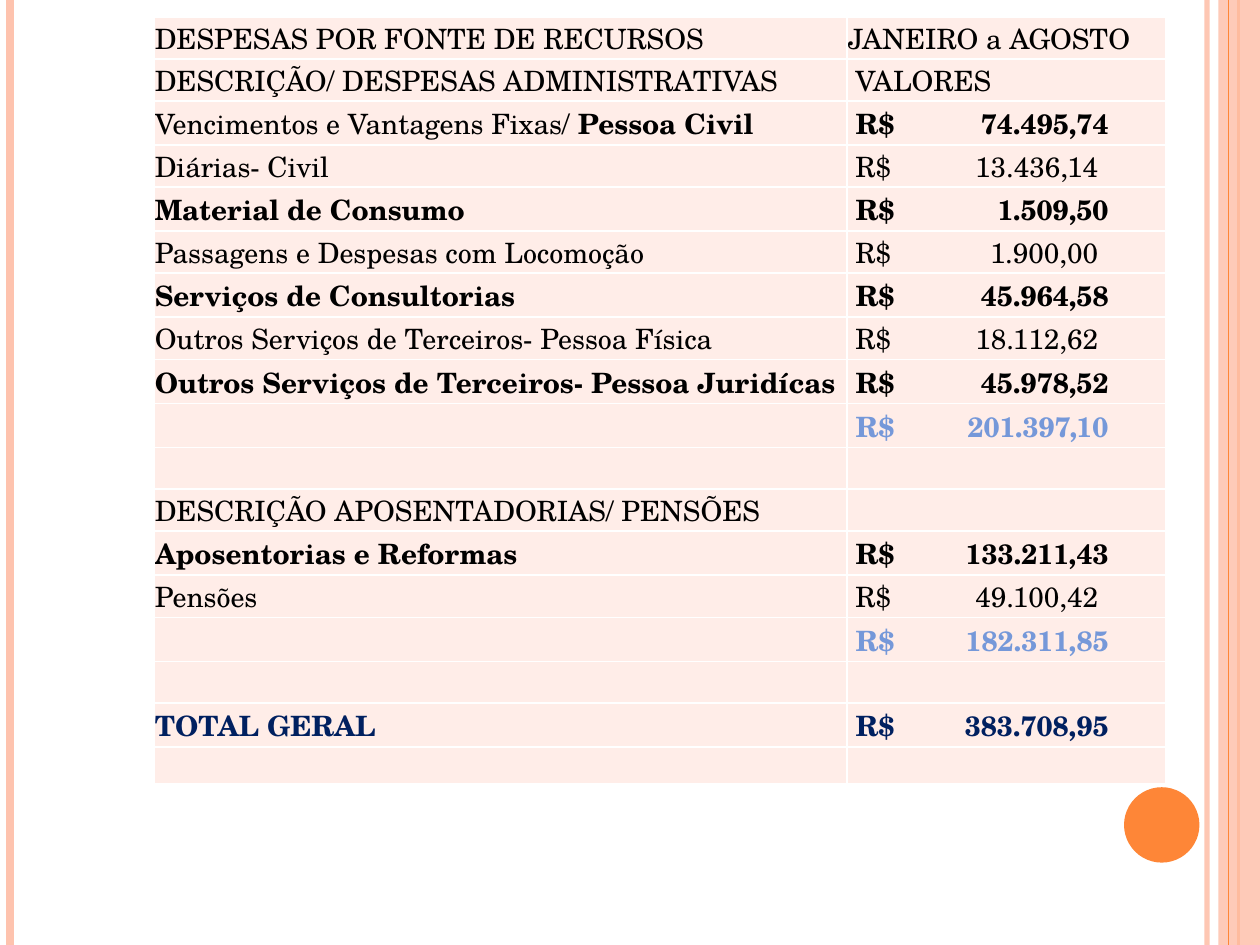
from dataclasses import dataclass

from lxml.etree import SubElement
from pptx import Presentation
from pptx.dml.color import RGBColor
from pptx.enum.shapes import MSO_CONNECTOR, MSO_SHAPE
from pptx.enum.text import MSO_ANCHOR
from pptx.oxml.ns import qn
from pptx.util import Cm, Pt

FONT = "TeX Gyre Schola"
BLACK = RGBColor(0x00, 0x00, 0x00)
WHITE = RGBColor(0xFF, 0xFF, 0xFF)
ORANGE = RGBColor(0xFE, 0x86, 0x37)
PEACH = RGBColor(0xFE, 0xC3, 0xAE)
BLUSH = RGBColor(0xFF, 0xED, 0xE8)
BLUE = RGBColor(0x75, 0x98, 0xD9)
NAVY = RGBColor(0x00, 0x20, 0x60)

ROW_HEIGHT, LAST_ROW_HEIGHT = Cm(0.84), Cm(0.73)
COLUMN_WIDTHS = Cm(13.97), Cm(6.43)
BOLD_TAB, REGULAR_TAB = Cm(5.26), Cm(5.05)


@dataclass
class Rule:
    x: float
    width: float
    color: RGBColor
    opacity: int = 100


@dataclass
class Expense:
    label: str = ""
    value: str = ""
    bold: bool = False
    color: RGBColor = BLACK
    bold_label: str = ""


RULES_BEHIND = [Rule(24.33, 3, PEACH, 93), Rule(0.2, 4.5, PEACH), Rule(24.97, 1.5, ORANGE)]
RULE_ON_BAND = Rule(24.77, 0.75, ORANGE)

EXPENSES = [
    Expense("DESPESAS POR FONTE DE RECURSOS", "JANEIRO a AGOSTO"),
    Expense("DESCRIÇÃO/ DESPESAS ADMINISTRATIVAS", " VALORES"),
    Expense("Vencimentos e Vantagens Fixas/ ", " R$\t74.495,74", True, bold_label="Pessoa Civil"),
    Expense("Diárias- Civil", " R$\t13.436,14"),
    Expense("Material de Consumo", " R$\t1.509,50", True),
    Expense("Passagens e Despesas com Locomoção", " R$\t1.900,00"),
    Expense("Serviços de Consultorias", " R$\t45.964,58", True),
    Expense("Outros Serviços de Terceiros- Pessoa Física", " R$\t18.112,62"),
    Expense("Outros Serviços de Terceiros- Pessoa Juridícas", " R$\t45.978,52", True),
    Expense("", " R$\t201.397,10", True, BLUE),
    Expense(),
    Expense("DESCRIÇÃO APOSENTADORIAS/ PENSÕES"),
    Expense("Aposentorias e Reformas", " R$\t133.211,43", True),
    Expense("Pensões", " R$\t49.100,42"),
    Expense("", " R$\t182.311,85", True, BLUE),
    Expense(),
    Expense("TOTAL GERAL", " R$\t383.708,95", True, NAVY),
    Expense(),
]


def set_opacity(fill_parent, percent: int) -> None:
    color = next(fill_parent.iter(qn("a:srgbClr")))
    SubElement(color, qn("a:alpha"), val=str(percent * 1000))


def add_rule(slide, rule: Rule, height: int) -> None:
    x = Cm(rule.x)
    line = slide.shapes.add_connector(MSO_CONNECTOR.STRAIGHT, x, 0, x, height)
    line.line.color.rgb = rule.color
    line.line.width = Pt(rule.width)
    if rule.opacity < 100:
        set_opacity(line.line._ln, rule.opacity)
    SubElement(line._element.spPr, qn("a:effectLst"))


def add_solid(slide, kind: MSO_SHAPE, box: tuple, color: RGBColor):
    sp = slide.shapes.add_shape(kind, *box)
    sp.shadow.inherit = False
    sp.fill.solid()
    sp.fill.fore_color.rgb = color
    sp.line.fill.background()
    return sp


def add_run(p, text: str, bold: bool, color: RGBColor) -> None:
    r = p.add_run()
    r.text = text
    r.font.name = FONT
    r.font.size = Pt(16)
    r.font.bold = bold
    r.font.color.rgb = color


def add_right_tab(p, position: int) -> None:
    tabs = SubElement(p._p.get_or_add_pPr(), qn("a:tabLst"))
    SubElement(tabs, qn("a:tab"), pos=str(position), algn="r")


def format_cell(cell) -> None:
    """Set the margins, white borders and blush fill of a cell."""
    cell.vertical_anchor = MSO_ANCHOR.BOTTOM
    cell.margin_left = cell.margin_right = cell.margin_top = Cm(0.02)
    cell.margin_bottom = 0
    tc_pr = cell._tc.get_or_add_tcPr()
    for side in ("lnL", "lnR", "lnT", "lnB"):
        border = SubElement(tc_pr, qn(f"a:{side}"), w=str(Pt(1)))
        fill = SubElement(border, qn("a:solidFill"))
        SubElement(fill, qn("a:srgbClr"), val=str(WHITE))
    cell.fill.solid()
    cell.fill.fore_color.rgb = BLUSH


def write_cell(cell, runs: list[tuple[str, bool]], color: RGBColor) -> None:
    format_cell(cell)
    p = cell.text_frame.paragraphs[0]
    for text, bold in runs:
        if "\t" in text:
            add_right_tab(p, BOLD_TAB if bold else REGULAR_TAB)
        if text:
            add_run(p, text, bold, color)
    SubElement(p._p, qn("a:endParaRPr"), sz="1600")


def add_expense_table(slide, expenses: list[Expense]) -> None:
    frame = slide.shapes.add_table(
        len(expenses), 2, Cm(3.1), Cm(0.34), sum(COLUMN_WIDTHS), ROW_HEIGHT * len(expenses))
    table = frame.table
    table.first_row = table.horz_banding = False
    for column, width in zip(table.columns, COLUMN_WIDTHS):
        column.width = width
    for row, expense in zip(table.rows, expenses):
        row.height = ROW_HEIGHT
        label_bold = expense.bold and not expense.bold_label
        label_runs = [(expense.label, label_bold), (expense.bold_label, True)]
        write_cell(row.cells[0], label_runs, expense.color)
        write_cell(row.cells[1], [(expense.value, expense.bold)], expense.color)
    table.rows[len(expenses) - 1].height = LAST_ROW_HEIGHT


def main() -> None:
    prs = Presentation()
    prs.slide_width, prs.slide_height = Cm(25.4), Cm(19.05)
    slide = prs.slides.add_slide(prs.slide_layouts[6])
    for rule in RULES_BEHIND:
        add_rule(slide, rule, prs.slide_height)
    band_box = Cm(24.56), 0, Cm(0.84), prs.slide_height
    band = add_solid(slide, MSO_SHAPE.RECTANGLE, band_box, PEACH)
    set_opacity(band._element.spPr, 87)
    add_rule(slide, RULE_ON_BAND, prs.slide_height)
    add_solid(slide, MSO_SHAPE.OVAL, (Cm(22.66), Cm(15.87), Cm(1.52), Cm(1.52)), ORANGE)
    add_expense_table(slide, EXPENSES)
    prs.save("out.pptx")


if __name__ == "__main__":
    main()
